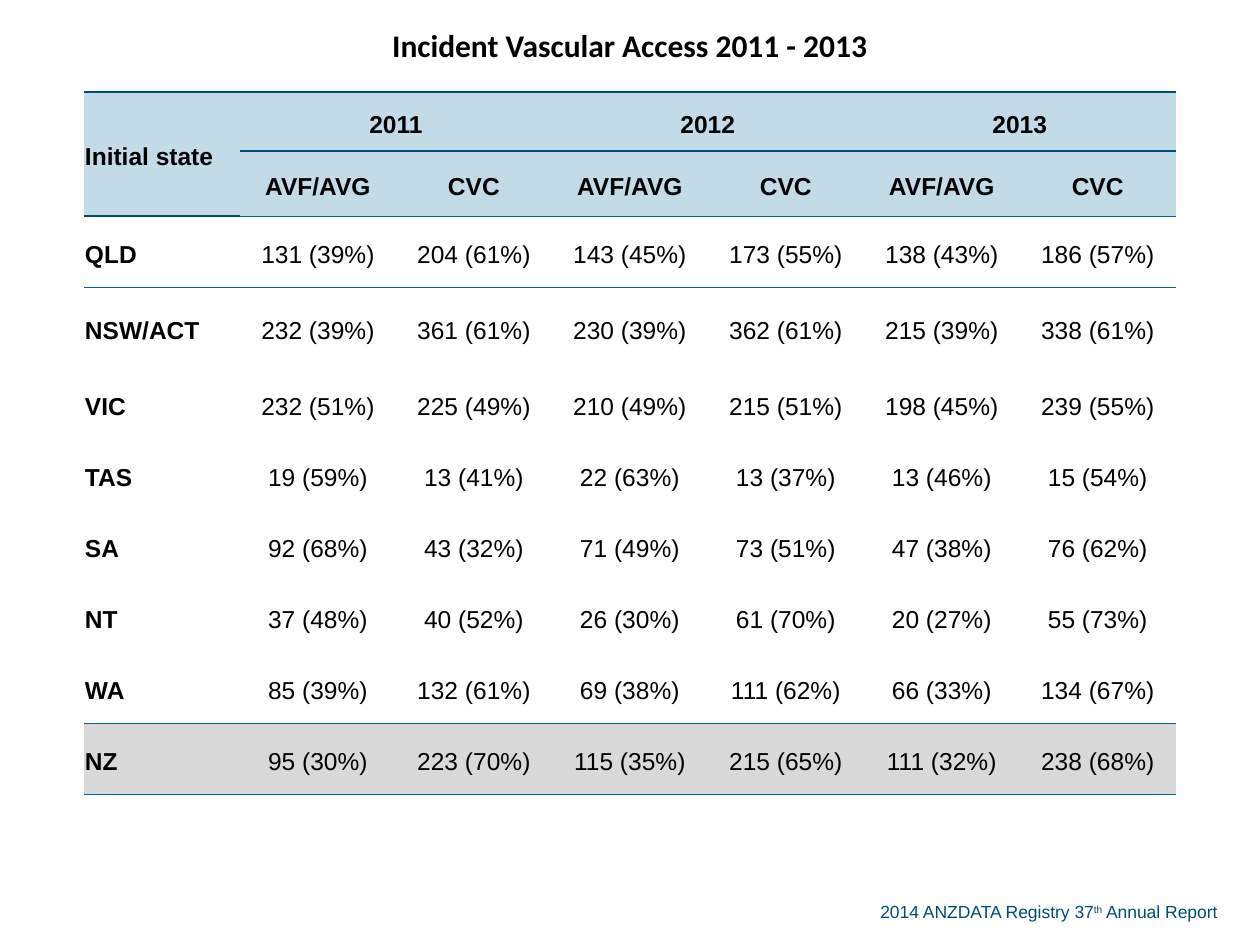
from lxml import etree
from pptx import Presentation
from pptx import util as u
from pptx.dml.color import RGBColor
from pptx.enum import text
from pptx.oxml import ns

PX = 914400 // 126
NAVY, BLUE, PALE, GREY = "004D73", "006699", "C2DBE7", "D9D9D9"
PLAIN = "{2D5ABB26-0587-4C30-8999-92F81FD0307C}"

TITLE = "Incident Vascular Access 2011 - 2013"
YEARS = ["2011", "2012", "2013"]
STATES = [
    ["QLD", "131 (39%)", "204 (61%)", "143 (45%)", "173 (55%)", "138 (43%)", "186 (57%)"],
    ["NSW/ACT", "232 (39%)", "361 (61%)", "230 (39%)", "362 (61%)", "215 (39%)", "338 (61%)"],
    ["VIC", "232 (51%)", "225 (49%)", "210 (49%)", "215 (51%)", "198 (45%)", "239 (55%)"],
    ["TAS", "19 (59%)", "13 (41%)", "22 (63%)", "13 (37%)", "13 (46%)", "15 (54%)"],
    ["SA", "92 (68%)", "43 (32%)", "71 (49%)", "73 (51%)", "47 (38%)", "76 (62%)"],
    ["NT", "37 (48%)", "40 (52%)", "26 (30%)", "61 (70%)", "20 (27%)", "55 (73%)"],
    ["WA", "85 (39%)", "132 (61%)", "69 (38%)", "111 (62%)", "66 (33%)", "134 (67%)"],
    ["NZ", "95 (30%)", "223 (70%)", "115 (35%)", "215 (65%)", "111 (32%)", "238 (68%)"],
]
HEIGHTS = [92, 59, 65, 71, 82] + [71] * 6
RULES = {1: (NAVY, 1), 3: (BLUE, 0.5), 10: (BLUE, 0.5), 11: (BLUE, 0.5)}


def px(n):
    return u.Emu(n * PX)


def rgb(code):
    return RGBColor.from_string(code)


def style(font, name, size, color, bold=False):
    font.name, font.size, font.bold = name, u.Pt(size), bold
    font.color.rgb = rgb(color)


def rule(cell, side, color, width):
    props = cell._tc.get_or_add_tcPr()
    line = etree.SubElement(props, ns.qn("a:" + side), w=str(u.Pt(width)))
    fill = etree.SubElement(line, ns.qn("a:solidFill"))
    etree.SubElement(fill, ns.qn("a:srgbClr"), val=color)


def dress(cell, row, col):
    cell.margin_left = cell.margin_right = cell.margin_top = px(1)
    cell.margin_bottom = 0
    cell.vertical_anchor = text.MSO_ANCHOR.MIDDLE
    for side, edge in (("lnT", row), ("lnB", row + 1)):
        if edge in RULES:
            rule(cell, side, *RULES[edge])
    tint = PALE if row in (1, 2) else GREY if row == 10 else None
    if tint:
        cell.fill.solid()
        cell.fill.fore_color.rgb = rgb(tint)
    para = cell.text_frame.paragraphs[0]
    if row == 0:
        para.alignment = text.PP_ALIGN.CENTER
        style(para.font, "Calibri", 18, "000000", True)
        return
    para.alignment = text.PP_ALIGN.CENTER if col else text.PP_ALIGN.LEFT
    para.line_spacing = 1.19
    para.space_after = u.Pt(14)
    style(para.font, "Arial", 14, "000000", row < 3 or col == 0)


def access(slide, left, top, width):
    heads = [TITLE] + [""] * 6
    years = ["Initial state"] + [t for y in YEARS for t in (y, "")]
    kinds = [""] + ["AVF/AVG", "CVC"] * 3
    data = [heads, years, kinds] + STATES
    frame = slide.shapes.add_table(
        len(data), 7, px(left), px(top), px(width), px(sum(HEIGHTS)))
    table = frame.table
    table.first_row = table.horz_banding = False
    next(table._tbl.iter(ns.qn("a:tableStyleId"))).text = PLAIN
    for col in table.columns:
        col.width = px(width) // 7
    for row, high in enumerate(HEIGHTS):
        table.rows[row].height = px(high)
        for col, word in enumerate(data[row]):
            cell = table.cell(row, col)
            if word:
                cell.text = word
            dress(cell, row, col)
    table.cell(0, 0).merge(table.cell(0, 6))
    table.cell(1, 0).merge(table.cell(2, 0))
    for col in (1, 3, 5):
        table.cell(1, col).merge(table.cell(1, col + 1))


def credit(slide, left, top, width, height):
    box = slide.shapes.add_textbox(px(left), px(top), px(width), px(height))
    box.text_frame.word_wrap = False
    para = box.text_frame.paragraphs[0]
    for word in ("2014 ANZDATA Registry 37", "th", " Annual Report"):
        run = para.add_run()
        run.text = word
        if word == "th":
            run.font._element.set("baseline", "30000")
    style(para.font, "Arial", 10, NAVY)


def main():
    deck = Presentation()
    deck.slide_width, deck.slide_height = px(1260), px(945)
    slide = deck.slides.add_slide(deck.slide_layouts[6])
    credit(slide, 868, 895, 377, 34)
    access(slide, 84, 0, 1092)
    deck.save("out.pptx")


if __name__ == "__main__":
    main()
